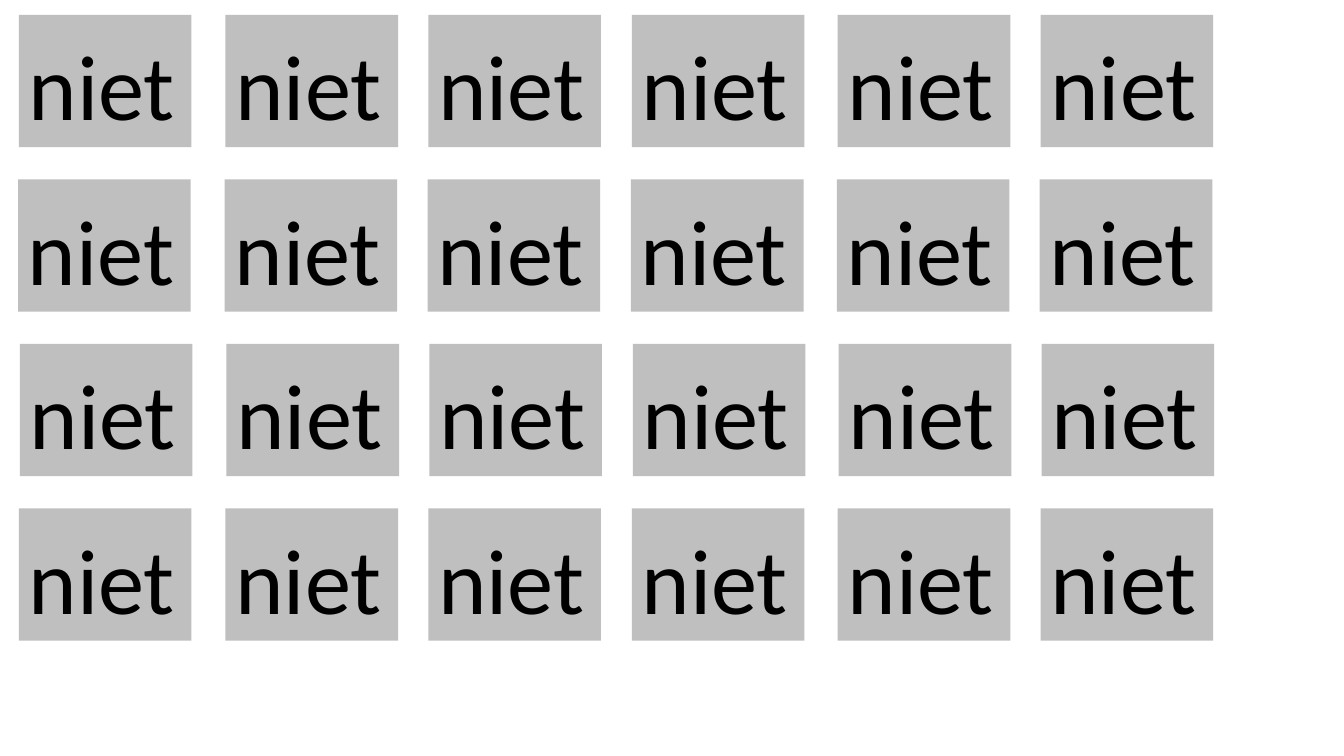
"""Build a slide with a four by six grid of grey cards reading "niet"."""
from pptx import Presentation
from pptx import util as u
from pptx.dml.color import RGBColor
from pptx.enum import text


def colour(fill, value):
    fill.solid()
    fill.fore_color.rgb = RGBColor.from_string(value)


deck = Presentation()
deck.slide_width, deck.slide_height = u.Pt(960), u.Pt(540)
page = deck.slides.add_slide(deck.slide_layouts[6])

column_lefts = [13.5, 161.1, 306, 451.3, 598.4, 743.3]
row_shifts = [0, -0.6, 0.7, 0]
first_top, row_step = 10.7, 117.5
card_width, card_height = 123.3, 94.5
spans = [("niet", 66, "000000"), (" ", 72, "F2F2F2")]

for row, shift in enumerate(row_shifts):
    for left in column_lefts:
        box = page.shapes.add_textbox(
            u.Pt(left + shift), u.Pt(first_top + row * row_step),
            u.Pt(card_width), u.Pt(card_height))
        colour(box.fill, "BFBFBF")
        frame = box.text_frame
        frame.word_wrap = True
        frame.auto_size = text.MSO_AUTO_SIZE.SHAPE_TO_FIT_TEXT
        para = frame.paragraphs[0]
        for wording, size, ink in spans:
            span = para.add_run()
            span.text = wording
            span.font.name = "Calibri"
            span.font.size = u.Pt(size)
            colour(span.font.fill, ink)

deck.save("out.pptx")
